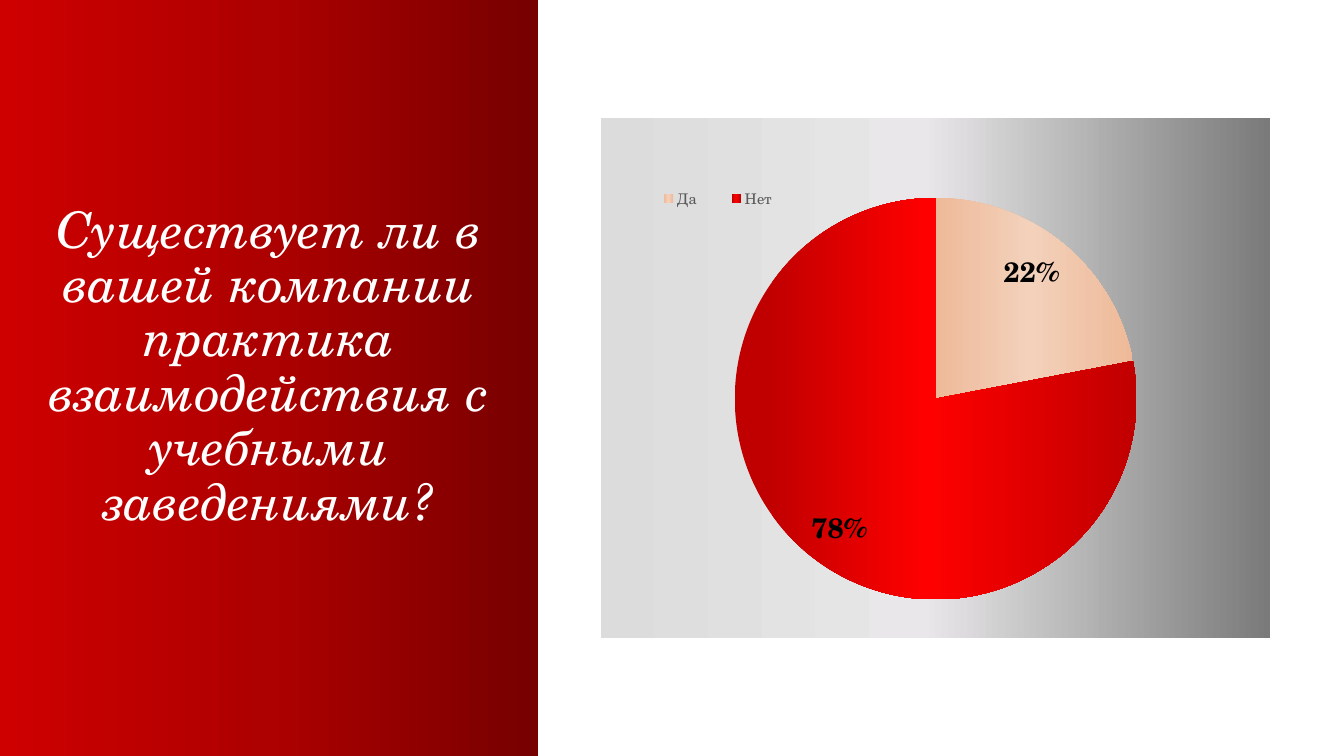
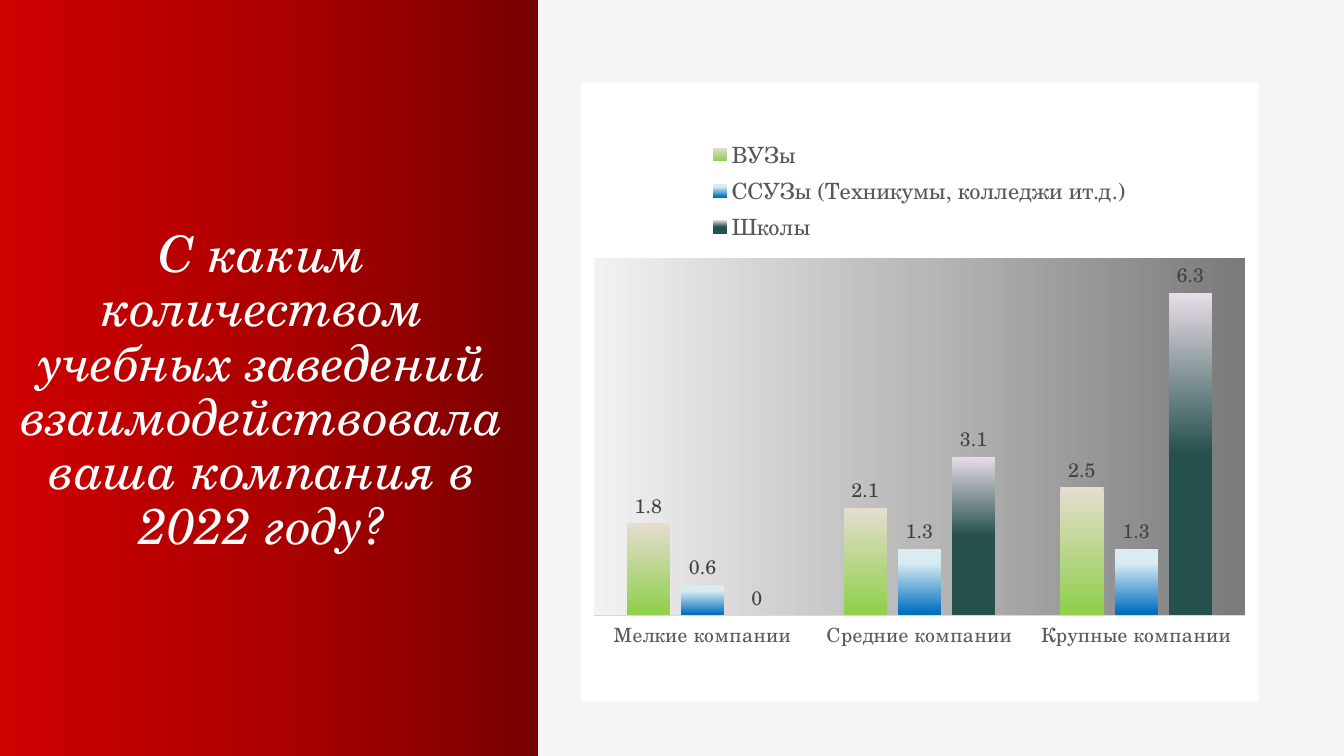
"""Build two survey slides: a question on a red panel beside a chart."""
from dataclasses import dataclass

from pptx import Presentation
from pptx.chart.data import CategoryChartData
from pptx.dml.color import RGBColor
from pptx.enum.chart import XL_CHART_TYPE, XL_LABEL_POSITION, XL_LEGEND_POSITION, XL_TICK_MARK
from pptx.enum.shapes import MSO_SHAPE
from pptx.enum.text import MSO_ANCHOR, PP_ALIGN
from pptx.oxml.ns import qn
from pptx.oxml.xmlchemy import OxmlElement
from pptx.util import Inches, Pt


@dataclass(frozen=True)
class Theme:
    font: str = "TeX Gyre Schola"
    chart_font: str = "Calibri"
    white: str = "FFFFFF"
    black: str = "000000"
    pale: str = "F5F5F5"
    muted: str = "595959"
    value_text: str = "404040"
    axis_line: str = "D9D9D9"
    panel: tuple = ((0, "CE0000"), (50, "AD0000"), (100, "770000"))
    pie_backdrop: tuple = ((0, "DCDCDC"), (48, "E9E7E9"), (100, "7A7A7A"))
    plot_backdrop: tuple = ((0, "F2F2F2"), (50, "B8B8B8"), (100, "7A7A7A"))
    title_size: float = 36
    percent_size: float = 20
    large_legend: float = 16
    label_size: float = 14
    small_legend: float = 10.5
    chart_size: float = 10


THEME = Theme()
WIDTH, HEIGHT, PANEL_WIDTH = 13.33, 7.5, 5.34

PRACTICE = {
    "question": "Существует ли в вашей компании практика взаимодействия с учебными заведениями?",
    "title_box": (0.12, 1.88, 5.1, 3.44),
    "chart_box": (5.96, 1.17, 6.64, 5.16),
    "plot_area": (0.2, 0.15, 0.6, 0.78),
    "legend_area": (0.05, 0.13, 0.25, 0.05),
    "answers": [
        ("Да", 22, ((0, "EEB999"), (48, "F3D1BB"), (100, "EEB999"))),
        ("Нет", 78, ((8, "C00000"), (48, "FF0000"), (100, "C00000"))),
    ],
}

PARTNERS = {
    "question": "С каким количеством учебных заведений взаимодействовала ваша компания в 2022 году?",
    "title_box": (0, 2.2, 5.21, 3.36),
    "card_box": (5.76, 0.82, 6.72, 6.14),
    "chart_box": (5.76, 1.23, 6.72, 5.3),
    "plot_area": (0.02, 0.25, 0.96, 0.67),
    "legend_area": (0.19, 0.02, 0.62, 0.21),
    "companies": ["Мелкие компании", "Средние компании", "Крупные компании"],
    "schools": [
        ("ВУЗы", (1.8, 2.1, 2.5), ((0, "E6DDD0"), (95, "92D050"))),
        ("ССУЗы (Техникумы, колледжи ит.д.)", (0.6, 1.3, 1.3), ((21, "D9ECF1"), (96, "0070C0"))),
        ("Школы", (0, 3.1, 6.3), ((0, "E7DDE7"), (50, "26504C"))),
    ],
}


def add_element(parent, tag, **attributes):
    """Append an XML child with the given attributes."""
    child = OxmlElement(tag)
    for key, value in attributes.items():
        child.set(key, str(value))
    parent.append(child)
    return child


def paint_gradient(properties, stops, angle=0):
    """Give shape properties a linear gradient in place of any solid fill."""
    gradient = OxmlElement("a:gradFill")
    stop_list = add_element(gradient, "a:gsLst")
    for percent, color in stops:
        stop = add_element(stop_list, "a:gs", pos=percent * 1000)
        add_element(stop, "a:srgbClr", val=color)
    add_element(gradient, "a:lin", ang=angle * 60000, scaled=0)
    solid = properties.find(qn("a:solidFill"))
    if solid is None:
        properties.insert(0, gradient)
    else:
        properties.replace(solid, gradient)


def style_font(font, size, color, name=THEME.font, bold=False, italic=False):
    """Set every aspect of a font."""
    font.name, font.size, font.bold, font.italic = name, Pt(size), bold, italic
    font.color.rgb = RGBColor.from_string(color)


def place(part, area):
    """Set a manual layout, as fractions of the chart, on a plot area or legend."""
    old = part.find(qn("c:layout"))
    if old is not None:
        part.remove(old)
    layout = OxmlElement("c:layout")
    manual = add_element(layout, "c:manualLayout")
    if part.tag == qn("c:plotArea"):
        add_element(manual, "c:layoutTarget", val="inner")
        part.insert(0, layout)
    else:
        part.find(qn("c:legendPos")).addnext(layout)
    for mode in ("xMode", "yMode"):
        add_element(manual, f"c:{mode}", val="edge")
    for side, fraction in zip("xywh", area):
        add_element(manual, f"c:{side}", val=fraction)


def add_block(slide, box, color):
    """Add a plain rectangle without outline or shadow."""
    block = slide.shapes.add_shape(MSO_SHAPE.RECTANGLE, *map(Inches, box))
    block.shadow.inherit = False
    block.fill.solid()
    block.fill.fore_color.rgb = RGBColor.from_string(color)
    block.line.fill.background()
    return block


def add_question_slide(deck, content, background):
    """Add a slide with the red panel and its question."""
    slide = deck.slides.add_slide(deck.slide_layouts.get_by_name("Title Only"))
    slide.background.fill.solid()
    slide.background.fill.fore_color.rgb = RGBColor.from_string(background)
    panel = add_block(slide, (0, 0, PANEL_WIDTH, HEIGHT), THEME.panel[0][1])
    paint_gradient(panel._element.spPr, THEME.panel)
    title = slide.shapes.title
    title._element.addprevious(panel._element)
    title.left, title.top, title.width, title.height = map(Inches, content["title_box"])
    title.text_frame.word_wrap = True
    title.text_frame.vertical_anchor = MSO_ANCHOR.BOTTOM
    question = title.text_frame.paragraphs[0]
    question.text = content["question"]
    question.alignment = PP_ALIGN.CENTER
    question.line_spacing = 0.9
    style_font(question.font, THEME.title_size, THEME.white, italic=True)
    return slide


def add_styled_chart(slide, kind, content, categories, series, legend_size):
    """Add a chart with its legend and both manual layouts."""
    data = CategoryChartData()
    data.categories = categories
    for name, values in series:
        data.add_series(name, values)
    chart = slide.shapes.add_chart(kind, *map(Inches, content["chart_box"]), data).chart
    style_font(chart.font, THEME.chart_size, THEME.black, THEME.chart_font)
    chart.has_title = False
    chart.has_legend = True
    chart.legend.position = XL_LEGEND_POSITION.TOP
    chart.legend.include_in_layout = False
    style_font(chart.legend.font, legend_size, THEME.muted)
    place(chart.legend._element, content["legend_area"])
    place(chart._chartSpace.chart.plotArea, content["plot_area"])
    return chart


def build_practice(deck):
    """Build the slide with the pie of yes and no answers."""
    slide = add_question_slide(deck, PRACTICE, THEME.white)
    answers, shares, gradients = zip(*PRACTICE["answers"])
    chart = add_styled_chart(slide, XL_CHART_TYPE.PIE, PRACTICE, answers,
                             [("Series 1", shares)], THEME.small_legend)
    backdrop = OxmlElement("c:spPr")
    chart._chartSpace.chart.addnext(backdrop)
    paint_gradient(backdrop, THEME.pie_backdrop)
    add_element(add_element(backdrop, "a:ln"), "a:noFill")
    chart.plots[0].vary_by_categories = True
    pie = chart.plots[0].series[0]
    for index, gradient in enumerate(gradients):
        slice_format = pie.points[index].format
        slice_format.fill.solid()
        slice_format.line.fill.background()
        point = pie._element.findall(qn("c:dPt"))[index]
        paint_gradient(point.find(qn("c:spPr")), gradient)
    labels = pie.data_labels
    labels.show_value, labels.show_percentage = False, True
    labels.number_format, labels.number_format_is_linked = "0%", False
    labels.position = XL_LABEL_POSITION.INSIDE_END
    style_font(labels.font, THEME.percent_size, THEME.black, bold=True)


def build_partners(deck):
    """Build the slide with the columns of partner schools."""
    slide = add_question_slide(deck, PARTNERS, THEME.pale)
    add_block(slide, PARTNERS["card_box"], THEME.white)
    schools = PARTNERS["schools"]
    chart = add_styled_chart(slide, XL_CHART_TYPE.COLUMN_CLUSTERED, PARTNERS,
                             PARTNERS["companies"], [school[:2] for school in schools],
                             THEME.large_legend)
    backdrop = add_element(chart._chartSpace.chart.plotArea, "c:spPr")
    paint_gradient(backdrop, THEME.plot_backdrop)
    columns = chart.plots[0]
    columns.gap_width, columns.overlap = 150, -25
    columns.vary_by_categories = False
    for series, (_, _, gradient) in zip(columns.series, schools):
        series.format.fill.solid()
        paint_gradient(series._element.find(qn("c:spPr")), gradient, 90)
        series.invert_if_negative = False
        labels = series.data_labels
        labels.show_value = True
        labels.position = XL_LABEL_POSITION.OUTSIDE_END
        style_font(labels.font, THEME.label_size, THEME.value_text)
    companies, counts = chart.category_axis, chart.value_axis
    companies.major_tick_mark = XL_TICK_MARK.NONE
    companies.format.line.color.rgb = RGBColor.from_string(THEME.axis_line)
    companies.format.line.width = Pt(1)
    style_font(companies.tick_labels.font, THEME.label_size, THEME.muted)
    counts.minimum_scale, counts.maximum_scale = 0, 7
    counts.has_major_gridlines = False
    counts.visible = False


def main():
    """Build and save the deck."""
    deck = Presentation()
    deck.slide_width, deck.slide_height = Inches(WIDTH), Inches(HEIGHT)
    build_practice(deck)
    build_partners(deck)
    deck.save("out.pptx")


if __name__ == "__main__":
    main()
